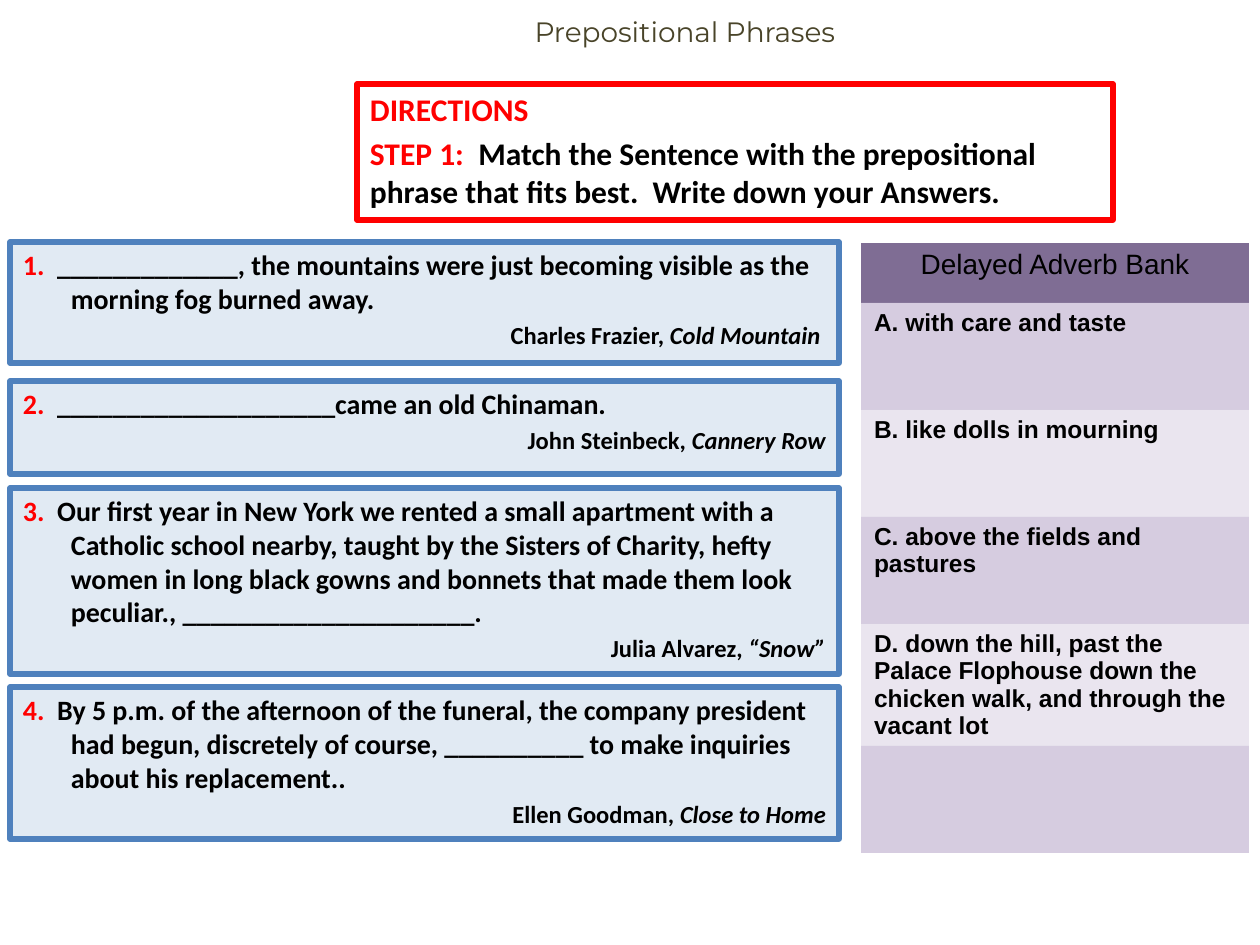
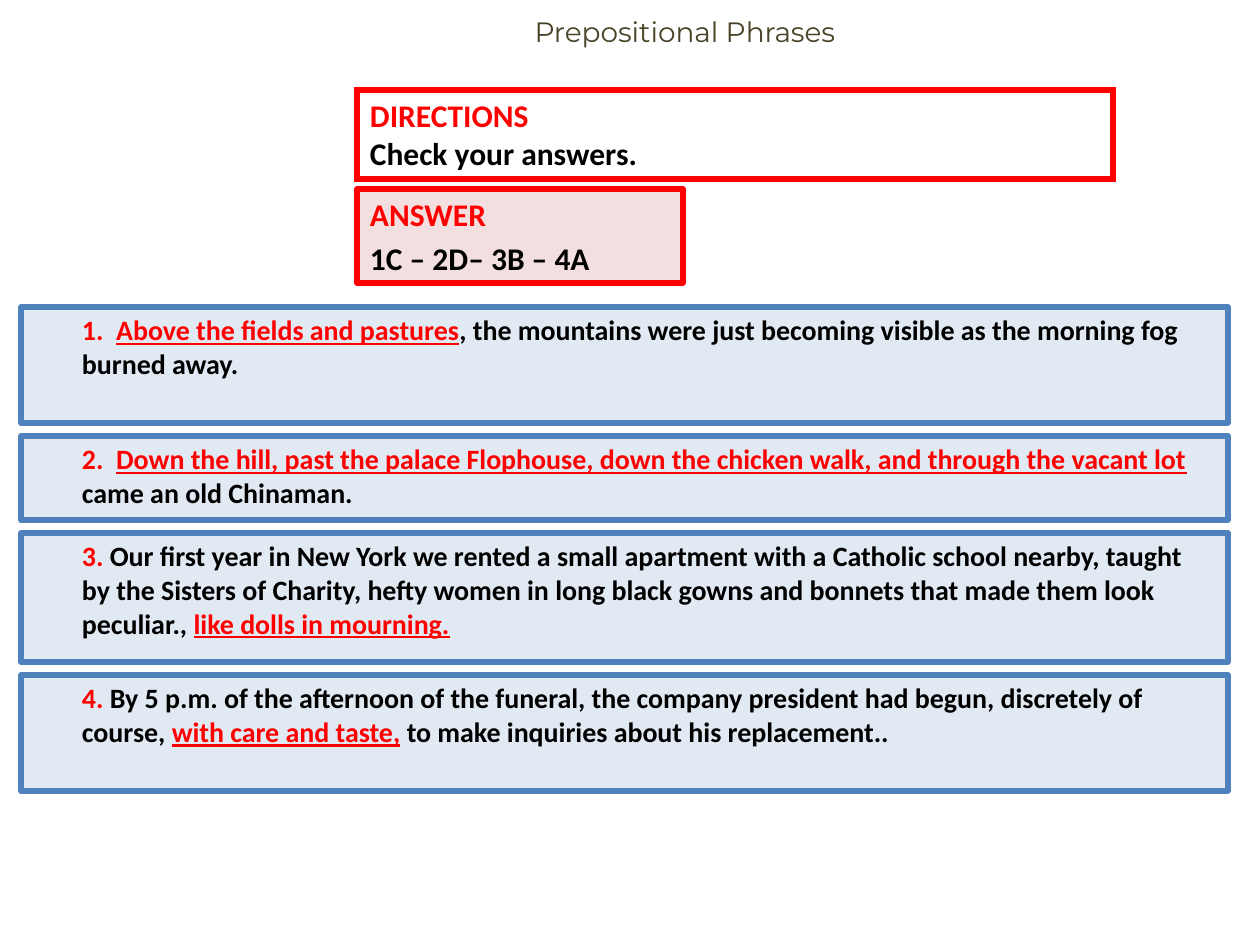
from dataclasses import dataclass
from typing import NamedTuple

from lxml import etree
from pptx import Presentation
from pptx import util as u
from pptx.dml.color import RGBColor
from pptx.enum import shapes, text
from pptx.oxml import ns

PX = 914400 / 126

RED = RGBColor(0xFF, 0x00, 0x00)
BLACK = RGBColor(0x00, 0x00, 0x00)
WHITE = RGBColor(0xFF, 0xFF, 0xFF)
OLIVE = RGBColor(0x49, 0x44, 0x29)
BLUE = RGBColor(0x4F, 0x81, 0xBD)
PALE_BLUE = RGBColor(0xDA, 0xE5, 0xF1)
PALE_RED = RGBColor(0xF2, 0xDA, 0xDA)
PURPLE = RGBColor(0x5F, 0x49, 0x7A)
LILAC = RGBColor(0xCC, 0xC0, 0xD9)
PALE_LILAC = RGBColor(0xE5, 0xDF, 0xEC)

INSET_X, INSET_Y = 13, 6
HANG = 48
NO_TABLE_STYLE = "{2D5ABB26-0587-4C30-8999-92F81FD0307C}"


class Run(NamedTuple):
    words: str
    color: RGBColor = BLACK
    size: int = 16
    italic: bool = False
    underline: bool = False


class Line(NamedTuple):
    runs: list[Run]
    align: text.PP_ALIGN = text.PP_ALIGN.LEFT
    margin: int = 0
    indent: int = 0
    before: float = 0


@dataclass
class Panel:
    left: int
    top: int
    width: int
    height: int
    lines: list[Line]
    fill: RGBColor = PALE_BLUE
    border: RGBColor = BLUE
    opacity: int = 80
    square_corners: bool = False


class Quote(NamedTuple):
    top: int
    height: int
    number: str
    sentence: str
    author: str
    work: str


def emu(px: int) -> int:
    return round(px * PX)


def place(shape, left: int, top: int, width: int, height: int) -> None:
    shape.left, shape.top = emu(left), emu(top)
    shape.width, shape.height = emu(width), emu(height)


def write(paragraph, words: str, *, size: int = 16, color: RGBColor = BLACK,
          font: str = "Calibri", bold: bool = True, italic: bool = False,
          underline: bool = False) -> None:
    run = paragraph.add_run()
    run.text = words
    run.font.size = u.Pt(size)
    run.font.name = font
    run.font.bold = bold
    run.font.italic = italic
    run.font.underline = underline
    run.font.color.rgb = color


def indent(paragraph, margin: int, first: int = 0) -> None:
    props = paragraph._p.get_or_add_pPr()
    props.set("marL", str(emu(margin)))
    props.set("indent", str(emu(first)))


def paint(fill, props, color: RGBColor, opacity: int) -> None:
    """Fill with a colour at an opacity given in percent."""
    fill.solid()
    fill.fore_color.rgb = color
    tint = props.find(f"{ns.qn('a:solidFill')}/{ns.qn('a:srgbClr')}")
    etree.SubElement(tint, ns.qn("a:alpha")).set("val", str(opacity * 1000))


def set_insets(box) -> None:
    box.margin_left = box.margin_right = emu(INSET_X)
    box.margin_top = box.margin_bottom = emu(INSET_Y)


def draw_panel(slide, panel: Panel) -> None:
    shape = slide.shapes.add_shape(
        shapes.MSO_SHAPE.RECTANGLE, emu(panel.left), emu(panel.top),
        emu(panel.width), emu(panel.height))
    shape.shadow.inherit = False
    paint(shape.fill, shape._element.spPr, panel.fill, panel.opacity)
    shape.line.color.rgb = panel.border
    shape.line.width = u.Pt(3)
    join = "a:miter" if panel.square_corners else "a:round"
    etree.SubElement(shape._element.spPr.find(ns.qn("a:ln")), ns.qn(join))
    frame = shape.text_frame
    frame.word_wrap = True
    frame.vertical_anchor = text.MSO_ANCHOR.TOP
    set_insets(frame)
    for i, line in enumerate(panel.lines):
        paragraph = frame.add_paragraph() if i else frame.paragraphs[0]
        paragraph.alignment = line.align
        paragraph.space_before = u.Pt(line.before)
        indent(paragraph, line.margin, line.indent)
        for run in line.runs:
            write(paragraph, run.words, size=run.size, color=run.color,
                  italic=run.italic, underline=run.underline)


def add_titled_slide(deck):
    slide = deck.slides.add_slide(deck.slide_layouts[5])
    title = slide.shapes.title
    place(title, 220, 10, 882, 73)
    frame = title.text_frame
    frame.auto_size = text.MSO_AUTO_SIZE.NONE
    frame.word_wrap = True
    frame.vertical_anchor = text.MSO_ANCHOR.TOP
    set_insets(frame)
    frame.margin_top = emu(4)
    heading = frame.paragraphs[0]
    heading.alignment = text.PP_ALIGN.CENTER
    indent(heading, HANG)
    write(heading, "Prepositional Phrases", color=OLIVE, font="Montserrat", bold=False)
    return slide


def draw_quote(slide, quote: Quote) -> None:
    sentence = Line([Run(quote.number, RED), Run(quote.sentence)],
                    margin=HANG, indent=-HANG)
    credit = Line([Run(quote.author, size=14), Run(quote.work, size=14, italic=True)],
                  text.PP_ALIGN.RIGHT, HANG, -HANG, 2.8)
    draw_panel(slide, Panel(10, quote.top, 829, quote.height, [sentence, credit]))


def draw_bank(slide, heading: str, phrases: list[str]) -> None:
    head_height, row_height, width = 60, 107, 388
    rows = [heading, *phrases]
    table = slide.shapes.add_table(
        len(rows), 1, emu(861), emu(243), emu(width),
        emu(head_height + row_height * len(phrases))).table
    table._tbl.tblPr.find(ns.qn("a:tableStyleId")).text = NO_TABLE_STYLE
    table.columns[0].width = emu(width)
    for i, words in enumerate(rows):
        is_head = i == 0
        table.rows[i].height = emu(head_height if is_head else row_height)
        cell = table.cell(i, 0)
        set_insets(cell)
        color = PURPLE if is_head else LILAC if i % 2 else PALE_LILAC
        paint(cell.fill, cell._tc.tcPr, color, 80)
        if words:
            paragraph = cell.text_frame.paragraphs[0]
            paragraph.alignment = text.PP_ALIGN.CENTER if is_head else text.PP_ALIGN.LEFT
            write(paragraph, words, size=16 if is_head else 14, font="Arial",
                  bold=not is_head)


def build_matching(deck) -> None:
    slide = add_titled_slide(deck)
    draw_panel(slide, Panel(357, 84, 756, 136, [
        Line([Run("DIRECTIONS", RED, 18)]),
        Line([Run("STEP 1:  ", RED, 18),
              Run("Match the Sentence with the prepositional phrase that fits best.  "
                  "Write down your Answers.", size=18)], before=3.6),
    ], WHITE, RED, 75))
    quotes = [
        Quote(242, 121, "1. ", " _____________, the mountains were just becoming visible "
              "as the morning fog burned away.", "Charles Frazier, ", "Cold Mountain "),
        Quote(381, 93, "2. ", " ____________________came an old Chinaman.",
              "John Steinbeck, ", "Cannery Row"),
        Quote(488, 186, "3.  ", "Our first year in New York we rented a small apartment "
              "with a Catholic school nearby, taught by the Sisters of Charity, hefty women "
              "in long black gowns and bonnets that made them look peculiar., "
              "_____________________.", "Julia Alvarez, ", "“Snow”"),
        Quote(687, 152, "4.  ", "By 5 p.m. of the afternoon of the funeral, the company "
              "president had begun, discretely of course, __________ to make inquiries "
              "about his replacement..", "Ellen Goodman, ", "Close to Home"),
    ]
    for quote in quotes:
        draw_quote(slide, quote)
    draw_bank(slide, "Delayed Adverb Bank", [
        "A. with care and taste",
        "B. like dolls in mourning",
        "C. above the fields and pastures",
        "D. down the hill, past the Palace Flophouse down the chicken walk, "
        "and through the vacant lot",
        "",
    ])


def build_answers(deck) -> None:
    slide = add_titled_slide(deck)
    draw_panel(slide, Panel(357, 90, 756, 89, [
        Line([Run("DIRECTIONS", RED, 18)]),
        Line([Run("Check your answers.", size=18)]),
    ], WHITE, RED, square_corners=True))
    draw_panel(slide, Panel(357, 189, 326, 94, [
        Line([Run("ANSWER", RED, 18)], margin=HANG, indent=-HANG),
        Line([Run("1C – 2D– 3B – 4A", size=18)], margin=HANG, indent=-HANG, before=3.6),
    ], PALE_RED, RED, 85))
    answers = [
        (116, [Run("1.  ", RED), Run("Above the fields and pastures", RED, underline=True),
               Run(", the mountains were just becoming visible as the morning fog "
                   "burned away.")]),
        (84, [Run("2.  ", RED),
              Run("Down the hill, past the palace Flophouse, down the chicken walk, "
                  "and through the vacant lot", RED, underline=True),
              Run(" came an old Chinaman.")]),
        (129, [Run("3. ", RED),
               Run("Our first year in New York we rented a small apartment with a Catholic "
                   "school nearby, taught by the Sisters of Charity, hefty women in long "
                   "black gowns and bonnets that made them look peculiar., "),
               Run("like dolls in mourning.", RED, underline=True)]),
        (116, [Run("4. ", RED),
               Run("By 5 p.m. of the afternoon of the funeral, the company president had "
                   "begun, discretely of course, "),
               Run("with care and taste,", RED, underline=True),
               Run(" to make inquiries about his replacement..")]),
    ]
    top, gap = 307, 13
    for height, runs in answers:
        draw_panel(slide, Panel(21, top, 1207, height, [Line(runs, margin=HANG)]))
        top += height + gap


def main() -> None:
    deck = Presentation()
    deck.slide_width, deck.slide_height = emu(1260), emu(945)
    build_matching(deck)
    build_answers(deck)
    deck.save("out.pptx")


if __name__ == "__main__":
    main()
